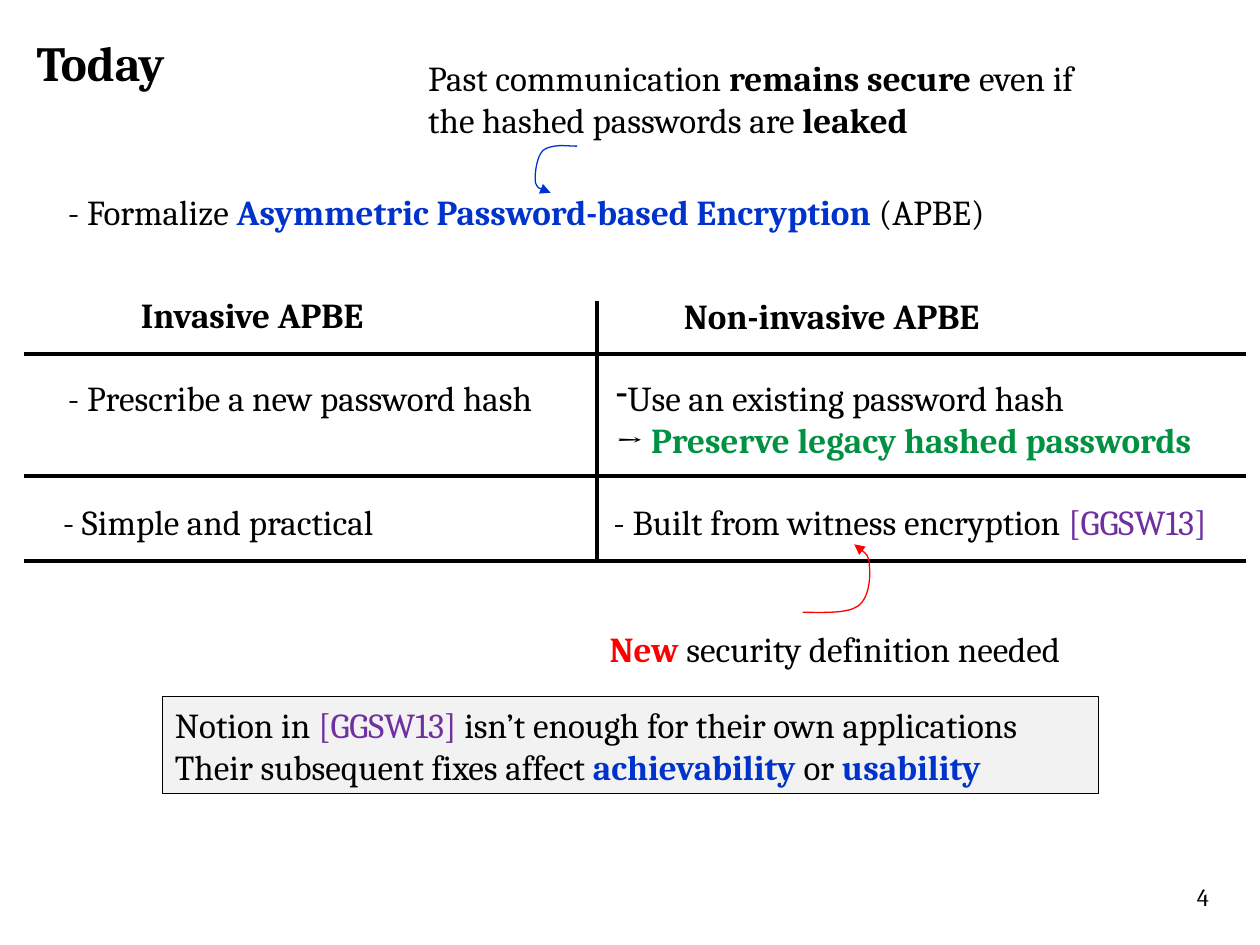
from dataclasses import dataclass

from lxml.etree import SubElement
from pptx import Presentation
from pptx.dml.color import RGBColor
from pptx.enum.shapes import MSO_CONNECTOR, MSO_SHAPE
from pptx.enum.text import MSO_ANCHOR, MSO_AUTO_SIZE, PP_ALIGN
from pptx.oxml.ns import qn
from pptx.util import Inches, Pt


@dataclass(frozen=True)
class Theme:
    font: str = "Cambria"
    title_size: int = 28
    body_size: int = 20
    number_size: int = 14
    thin: float = 0.75
    rule: float = 2.25
    black: str = "000000"
    blue: str = "0033CC"
    red: str = "FF0000"
    green: str = "009242"
    purple: str = "7030A0"
    panel: str = "F2F2F2"


THEME = Theme()
ONE_LINE, TWO_LINES = 0.44, 0.77
TABLE_LEFT, TABLE_MIDDLE, TABLE_RIGHT = 0.19, 4.74, 9.89
TABLE_TOP = 2.39
ROW_RULES = (2.81, 3.78, 4.45)
HEADING_TOP, HASH_TOP, BASIS_TOP = 2.28, 2.94, 3.92


def color(value):
    return RGBColor.from_string(value)


def plain(text, ink=THEME.black):
    return text, ink, False


def strong(text, ink=THEME.black):
    return text, ink, True


def write(frame, paragraphs, size=THEME.body_size):
    """Fill a text frame; each paragraph is a list of (text, colour, bold)."""
    for index, pieces in enumerate(paragraphs):
        paragraph = frame.add_paragraph() if index else frame.paragraphs[0]
        paragraph.alignment = PP_ALIGN.LEFT
        for text, ink, bold in pieces:
            run = paragraph.add_run()
            run.text = text
            run.font.name = THEME.font
            run.font.size = Pt(size)
            run.font.bold = bold
            run.font.color.rgb = color(ink)


def add_title(slide, text, left, top, width, height):
    title = slide.shapes.title
    title.left, title.top = Inches(left), Inches(top)
    title.width, title.height = Inches(width), Inches(height)
    frame = title.text_frame
    frame.word_wrap = False
    frame.auto_size = MSO_AUTO_SIZE.SHAPE_TO_FIT_TEXT
    frame.vertical_anchor = MSO_ANCHOR.TOP
    write(frame, [[strong(text)]], THEME.title_size)


def add_text(slide, left, top, width, *paragraphs, size=THEME.body_size):
    height = TWO_LINES if len(paragraphs) > 1 else ONE_LINE
    box = slide.shapes.add_textbox(
        Inches(left), Inches(top), Inches(width), Inches(height))
    box.text_frame.word_wrap = True
    box.text_frame.auto_size = MSO_AUTO_SIZE.SHAPE_TO_FIT_TEXT
    write(box.text_frame, paragraphs, size)
    return box


def add_dash_bullet(paragraph):
    properties = paragraph._p.get_or_add_pPr()
    properties.set("marL", "0")
    properties.set("indent", "0")
    SubElement(properties, qn("a:buChar")).set("char", "-")


def add_panel(slide, left, top, width, *paragraphs):
    panel = slide.shapes.add_shape(
        MSO_SHAPE.RECTANGLE, Inches(left), Inches(top), Inches(width), Inches(TWO_LINES))
    panel.shadow.inherit = False
    panel.fill.solid()
    panel.fill.fore_color.rgb = color(THEME.panel)
    panel.line.color.rgb = color(THEME.black)
    panel.line.width = Pt(THEME.thin)
    panel.text_frame.word_wrap = True
    write(panel.text_frame, paragraphs)


def add_rule(slide, x1, y1, x2, y2):
    rule = slide.shapes.add_connector(
        MSO_CONNECTOR.STRAIGHT, Inches(x1), Inches(y1), Inches(x2), Inches(y2))
    rule.line.color.rgb = color(THEME.black)
    rule.line.width = Pt(THEME.rule)
    SubElement(rule._element.spPr, qn("a:effectLst"))


def add_curved_arrow(slide, ink, *points):
    """Draw cubic curves: a start point, then two controls and an end per curve."""
    start, *rest = [(Inches(x), Inches(y)) for x, y in points]
    builder = slide.shapes.build_freeform(*start, scale=1.0)
    builder.add_line_segments(rest, close=False)
    arrow = builder.convert_to_shape()
    outline = next(arrow._element.iter(qn("a:path")))
    segments = outline.findall(qn("a:lnTo"))
    for first in range(0, len(segments), 3):
        curve = SubElement(outline, qn("a:cubicBezTo"))
        for segment in segments[first:first + 3]:
            curve.append(segment[0])
            outline.remove(segment)
    arrow.shadow.inherit = False
    arrow.fill.background()
    arrow.line.color.rgb = color(ink)
    arrow.line.width = Pt(THEME.thin)
    SubElement(arrow.line._get_or_add_ln(), qn("a:tailEnd")).set("type", "triangle")


def add_comparison(slide):
    add_rule(slide, TABLE_MIDDLE, TABLE_TOP, TABLE_MIDDLE, ROW_RULES[-1])
    for y in ROW_RULES:
        add_rule(slide, TABLE_LEFT, y, TABLE_RIGHT, y)
    add_text(slide, 1.02, HEADING_TOP, 2.09, [strong("Invasive APBE")])
    add_text(slide, 5.33, HEADING_TOP + 0.01, 2.87, [strong("Non-invasive APBE")])
    add_text(slide, 0.44, HASH_TOP, 5.04, [plain("- Prescribe a new password hash")])
    legacy = add_text(
        slide, 4.79, HASH_TOP, 5.47,
        [plain("Use an existing password hash")],
        [plain("→ "), strong("Preserve legacy hashed passwords", THEME.green)])
    add_dash_bullet(legacy.text_frame.paragraphs[0])
    add_text(slide, 0.4, BASIS_TOP, 3.94, [plain("- Simple and practical")])
    add_text(slide, 4.77, BASIS_TOP, 5.3,
             [plain("- Built from witness encryption "), plain("[GGSW13]", THEME.purple)])


def main():
    presentation = Presentation()
    presentation.slide_width, presentation.slide_height = Inches(10), Inches(7.5)
    slide = presentation.slides.add_slide(presentation.slide_layouts[5])

    add_title(slide, "Today", 0.19, 0.21, 1.28, 0.57)
    add_text(slide, 3.3, 0.4, 5.61,
             [plain("Past communication "), strong("remains secure "),
              plain("even if the hashed passwords are "), strong("leaked")])
    add_text(slide, 0.44, 1.46, 10.57,
             [plain("- Formalize "),
              strong("Asymmetric Password-based Encryption ", THEME.blue),
              plain("(APBE)")])
    add_curved_arrow(slide, THEME.blue, (4.58, 1.16),
                     (4.52, 1.16), (4.45, 1.15), (4.4, 1.16),
                     (4.35, 1.17), (4.31, 1.18), (4.29, 1.22),
                     (4.26, 1.27), (4.24, 1.39), (4.25, 1.45),
                     (4.27, 1.5), (4.32, 1.51), (4.37, 1.53))

    add_comparison(slide)

    add_curved_arrow(slide, THEME.red, (6.37, 4.86),
                     (6.55, 4.86), (6.72, 4.87), (6.81, 4.81),
                     (6.9, 4.75), (6.91, 4.57), (6.9, 4.49),
                     (6.9, 4.41), (6.84, 4.36), (6.78, 4.32))
    add_text(slide, 4.74, 4.93, 4.91,
             [strong("New ", THEME.red), plain("security definition needed")])
    add_panel(slide, 1.29, 5.53, 7.43,
              [plain("Notion in "), plain("[GGSW13] ", THEME.purple),
               plain("isn’t enough for their own applications")],
              [plain("Their subsequent fixes affect "),
               strong("achievability ", THEME.blue), plain("or "),
               strong("usability", THEME.blue)])
    add_text(slide, 9.4, 6.95, 0.91, [plain("4")], size=THEME.number_size)

    presentation.save("out.pptx")


if __name__ == "__main__":
    main()
